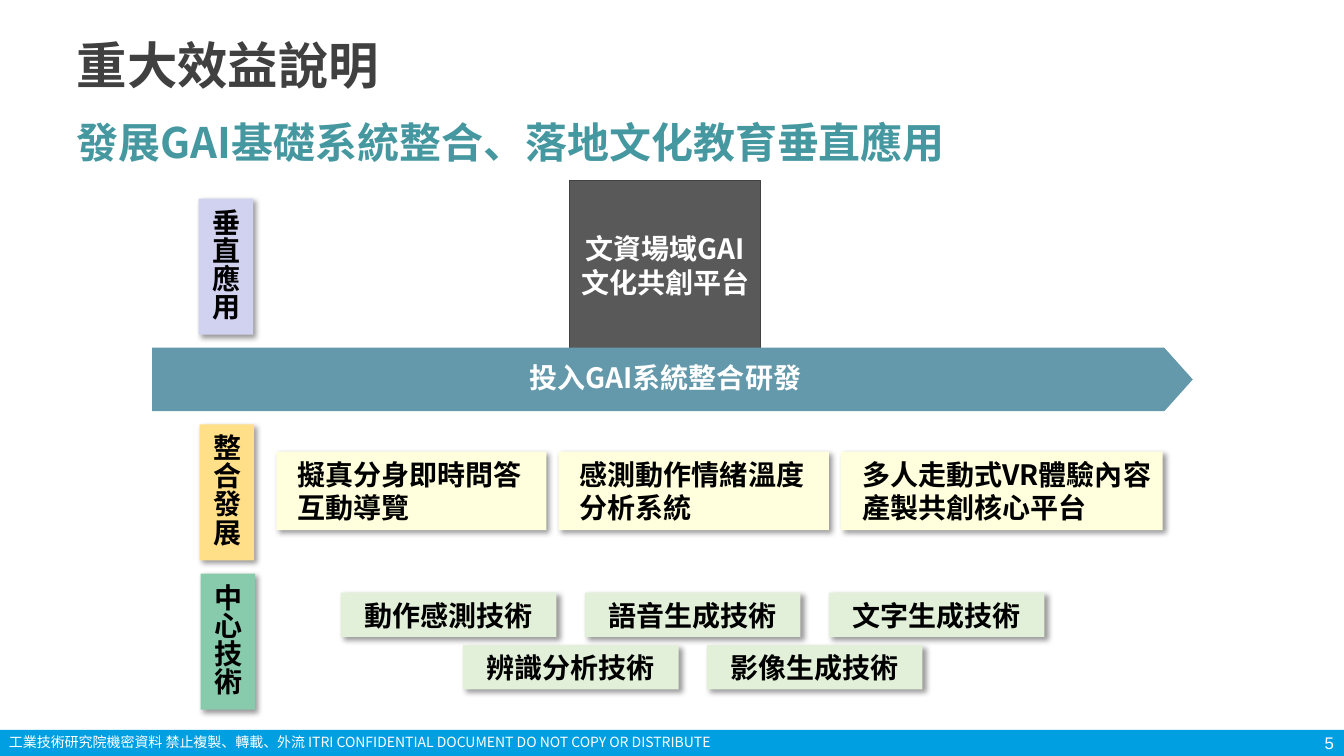
from lxml import etree
from pptx import Presentation
from pptx.dml.color import RGBColor
from pptx.enum import shapes, text
from pptx.oxml import ns
from pptx.util import Inches, Pt

COLORS = {
    "ink": "000000", "white": "FFFFFF", "title": "404040", "subtitle": "4597A0",
    "footer": "009FE2", "platform": "595959", "platform_line": "424242",
    "arrow": "6399AB", "application": "D1D1F0", "integration": "FFE089",
    "technology": "87CAAC", "system": "FFFFDD", "skill": "E2F0D9",
}
CJK_TC, CJK_SC = "Noto Sans CJK TC", "Noto Sans CJK SC"
CENTER, LEFT, RIGHT = text.PP_ALIGN.CENTER, text.PP_ALIGN.LEFT, text.PP_ALIGN.RIGHT
TOP, MIDDLE = text.MSO_ANCHOR.TOP, text.MSO_ANCHOR.MIDDLE
SHAPE = shapes.MSO_SHAPE


def rgb(name):
    return RGBColor.from_string(COLORS[name])


def write(sp, words, size=20, color="ink", font=CJK_TC, bold=True,
          align=CENTER, anchor=MIDDLE):
    tf = sp.text_frame
    tf.word_wrap = True
    tf.vertical_anchor = anchor
    p = tf.paragraphs[0]
    p.alignment = align
    r = p.add_run()
    r.text = words
    p.font.size = Pt(size)
    p.font.bold = bold
    p.font.name = font
    p.font.color.rgb = rgb(color)
    east_asian = etree.SubElement(r._r.get_or_add_rPr(), ns.qn("a:ea"))
    east_asian.set("typeface", CJK_TC if font == "Arial" else font)
    return p


def add_text(s, box, words, **style):
    sp = s.shapes.add_textbox(*map(Inches, box))
    return write(sp, words, **style)


def add_block(s, box, fill, kind=SHAPE.RECTANGLE):
    sp = s.shapes.add_shape(kind, *map(Inches, box))
    sp.shadow.inherit = False
    sp.fill.solid()
    sp.fill.fore_color.rgb = rgb(fill)
    sp.line.fill.background()
    return sp


def add_card(s, box, fill, words, **style):
    sp = add_block(s, box, fill)
    effects = sp._element.spPr.find(ns.qn("a:effectLst"))
    shadow = etree.SubElement(effects, ns.qn("a:outerShdw"), blurRad=str(Pt(4)),
                              dist=str(Pt(3)), dir="2700000", algn="tl", rotWithShape="0")
    tone = etree.SubElement(shadow, ns.qn("a:srgbClr"), val=COLORS["ink"])
    etree.SubElement(tone, ns.qn("a:alpha"), val="40000")
    write(sp, words, **style)
    return sp


def add_label(s, left, top, fill, words):
    sp = add_card(s, (left, top, 0.54, 1.35), fill, words, font="Arial")
    sp.text_frame._txBody.bodyPr.set("vert", "eaVert")


def add_header(s, left, top):
    title = s.shapes.title
    title.left, title.top = Inches(left), Inches(top)
    title.width, title.height = Inches(12.08), Inches(1.03)
    write(title, "重大效益說明", size=36, color="title", font="Arial",
          align=LEFT, anchor=TOP)
    p = add_text(s, (left, top + 0.82, 8.94, 0.61),
                 "發展GAI基礎系統整合、落地文化教育垂直應用",
                 size=30, color="subtitle", align=LEFT, anchor=TOP)
    p.space_after = Pt(6)


def add_footer(s, top, width, height):
    add_block(s, (0, top, width, height), "footer")
    add_text(s, (-0.01, top - 0.01, 7.79, 0.27),
             "工業技術研究院機密資料 禁止複製、轉載、外流 "
             "ITRI CONFIDENTIAL DOCUMENT DO NOT COPY OR DISTRIBUTE",
             size=10, color="white", font=CJK_SC, bold=False, align=LEFT, anchor=TOP)
    add_text(s, (width - 0.83, top, 0.83, height), "5",
             size=12, color="white", font="Arial", bold=False, align=RIGHT)


def add_application(s, left, top):
    add_label(s, left, top, "application", "垂直應用")
    platform = add_block(s, (left + 3.68, top - 0.18, 1.89, 2.23), "platform")
    platform.line.color.rgb = rgb("platform_line")
    platform.line.width = Pt(1)
    arrow = add_block(s, (left - 0.46, top + 1.48, 10.32, 0.63), "arrow", SHAPE.PENTAGON)
    arrow.adjustments[0] = 0.448
    tf = arrow.text_frame
    tf.margin_left = tf.margin_right = Inches(0.05)
    write(arrow, "投入GAI系統整合研發", color="white", font=CJK_SC).line_spacing = 0.85
    add_text(s, (left + 3.65, top + 0.28, 1.96, 0.77),
             "文資場域GAI文化共創平台", color="white")


def add_integration(s, left, top):
    add_label(s, left, top, "integration", "整合發展")
    x = left + 0.76
    for words, width in (("擬真分身即時問答互動導覽", 2.68),
                         ("感測動作情緒溫度分析系統", 2.68),
                         ("多人走動式VR體驗內容產製共創核心平台", 3.19)):
        sp = add_card(s, (x, top + 0.27, width, 0.78), "system", words, align=LEFT)
        sp.text_frame.margin_left = Inches(0.21)
        x += width + 0.12


def add_technology(s, left, top):
    add_label(s, left, top, "technology", "中心技術")
    pitch = 2.42
    rows = (("動作感測技術", "語音生成技術", "文字生成技術"),
            ("辨識分析技術", "影像生成技術"))
    for i, row in enumerate(rows):
        for j, words in enumerate(row):
            x = left + 1.39 + (j + i / 2) * pitch
            add_card(s, (x, top + 0.19 + i * 0.52, 2.14, 0.44), "skill", words, font="Arial")


def main():
    prs = Presentation()
    prs.slide_width, prs.slide_height = Inches(13.33), Inches(7.5)
    s = prs.slides.add_slide(prs.slide_layouts[5])
    add_footer(s, 7.24, 13.33, 0.26)
    add_header(s, 0.66, 0.29)
    add_application(s, 1.97, 1.97)
    add_integration(s, 1.98, 4.21)
    add_technology(s, 1.99, 5.69)
    prs.save("out.pptx")


if __name__ == "__main__":
    main()
